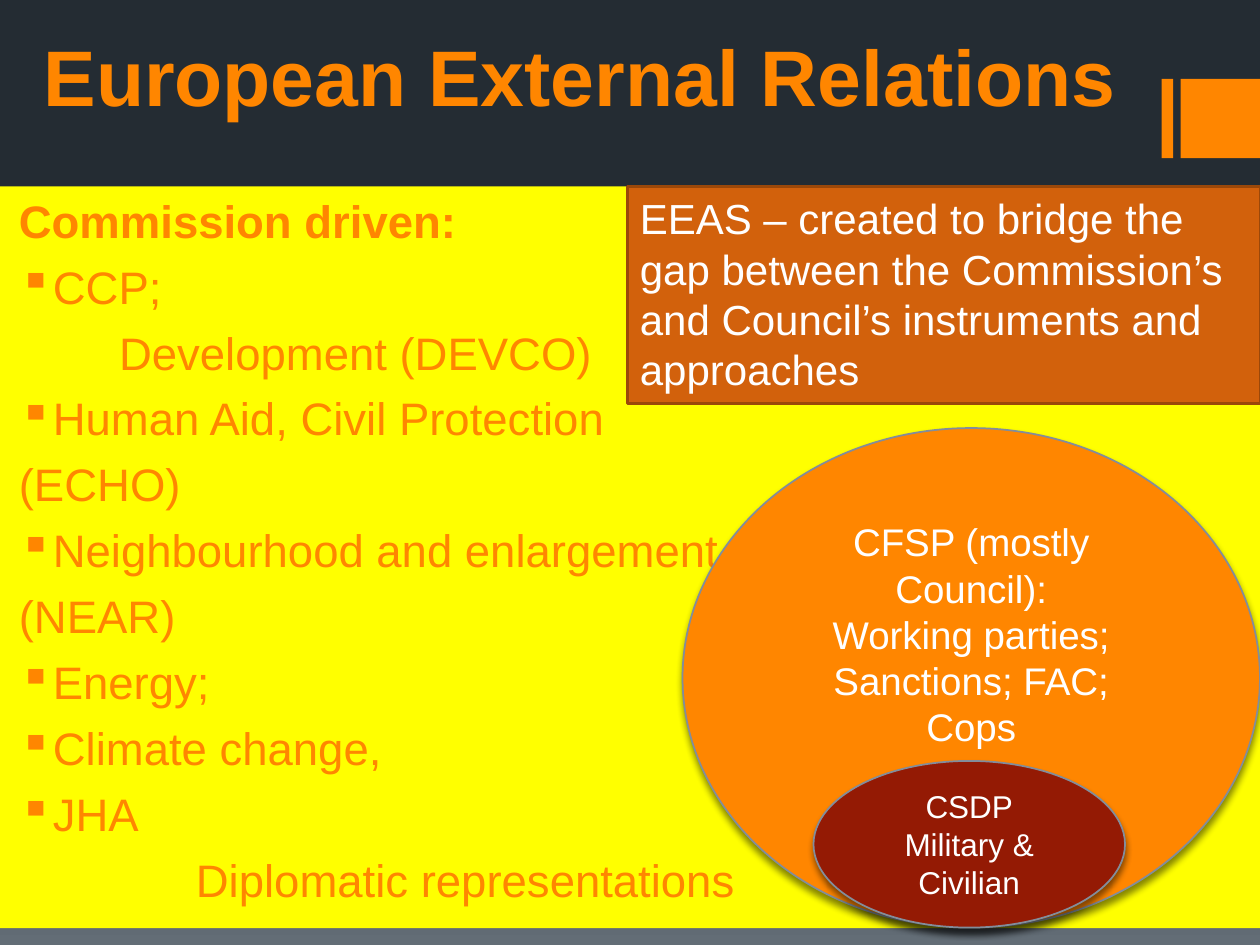
from lxml import etree
from pptx import Presentation
from pptx import util as u
from pptx.dml.color import RGBColor
from pptx.enum import shapes, text
from pptx.oxml import parse_xml
from pptx.oxml.ns import nsdecls, qn

# Content
ORANGE, WHITE = "FF8600", "FFFFFF"
TITLE = "European External Relations"
BACKGROUND_STOPS = [(0, "242C33"), (65, "273037"), (100, "636D76")]
ACCENT_BARS = [(23.42, 1.59, 0.23, 1.6), (23.8, 1.59, 1.6, 1.6)]
# Wording, left margin in cm, bulleted
COMMISSION = [
    ("Commission driven:", 0.13, False),
    ("CCP;", 0.63, True),
    ("Development (DEVCO)", 2.15, False),
    ("Human Aid, Civil Protection", 0.63, True),
    ("(ECHO)", 0.13, False),
    ("Neighbourhood and enlargement", 0.63, True),
    ("(NEAR)", 0.13, False),
    ("Energy;", 0.63, True),
    ("Climate change,", 0.63, True),
    ("JHA", 0.63, True),
    ("Diplomatic representations", 3.7, False),
]
EEAS = ["EEAS – created to bridge the gap between the Commission’s "
        "and Council’s instruments and approaches"]
# Place, fill, text size, bottom inset in cm, lines
ELLIPSES = [
    ((13.76, 8.63, 11.64, 10.07), ORANGE, 22, 1.9,
     ["CFSP (mostly Council):", "Working parties;", "Sanctions; FAC;", "Cops"]),
    ((16.4, 15.34, 6.28, 3.36), "941A04", 18, 0.13,
     ["CSDP", "Military & Civilian"]),
]


def colour(value):
    return RGBColor.from_string(value)


def add_shape(kind, place, fill, line=None, line_width=1):
    shape = slide.shapes.add_shape(kind, *map(u.Cm, place))
    shape.shadow.inherit = False
    shape.fill.solid()
    shape.fill.fore_color.rgb = colour(fill)
    if line:
        shape.line.color.rgb = colour(line)
        shape.line.width = u.Pt(line_width)
    else:
        shape.line.fill.background()
    return shape


def write(shape, lines, size, value, align, anchor, bold=False):
    frame = shape.text_frame
    frame.word_wrap = True
    frame.vertical_anchor = anchor
    frame.text = "\n".join(lines)
    for paragraph in frame.paragraphs:
        paragraph.alignment = align
        font = paragraph.font
        font.name, font.size, font.bold = "Arial", u.Pt(size), bold
        font.color.rgb = colour(value)
    return frame


def set_indent(paragraph, margin, bulleted):
    properties = paragraph._p.get_or_add_pPr()
    properties.set("marL", str(u.Cm(margin)))
    properties.set("indent", str(u.Cm(-0.5 if bulleted else 0)))
    if bulleted:
        bullet = etree.Element(qn("a:buChar"), char="▪")
        properties.find(qn("a:defRPr")).addprevious(bullet)


def add_drop_shadow(shape):
    effects = shape._element.spPr.find(qn("a:effectLst"))
    effects.append(parse_xml(
        f'<a:outerShdw {nsdecls("a")} blurRad="{u.Pt(3.8)}" dist="{u.Pt(3)}" '
        'dir="5400000" rotWithShape="0"><a:srgbClr val="000000">'
        '<a:alpha val="48000"/></a:srgbClr></a:outerShdw>'))


presentation = Presentation()
presentation.slide_width, presentation.slide_height = u.Cm(25.4), u.Cm(19.05)
slide = presentation.slides.add_slide(presentation.slide_layouts[6])
rectangle, ellipse = shapes.MSO_SHAPE.RECTANGLE, shapes.MSO_SHAPE.OVAL
left, center = text.PP_ALIGN.LEFT, text.PP_ALIGN.CENTER
top, middle, bottom = (text.MSO_ANCHOR.TOP, text.MSO_ANCHOR.MIDDLE,
                       text.MSO_ANCHOR.BOTTOM)

# Background gradient, dark at the top
background = slide.background.fill
background.gradient()
background.gradient_angle = 270
stops = slide._element.find(".//" + qn("a:gsLst"))
stops.clear()
for position, value in BACKGROUND_STOPS:
    stop = etree.SubElement(stops, qn("a:gs"), pos=str(position * 1000))
    etree.SubElement(stop, qn("a:srgbClr"), val=value)

# Accent bars and title
for place in ACCENT_BARS:
    add_shape(rectangle, place, ORANGE)
title = slide.shapes.add_textbox(*map(u.Cm, (0, 0, 23.37, 2.59)))
write(title, [TITLE], 45, ORANGE, center, bottom, bold=True)

# Commission list
panel = add_shape(rectangle, (0, 3.76, 25.4, 14.95), "FFFF00")
frame = write(panel, [item[0] for item in COMMISSION], 26, ORANGE, left, top)
for paragraph, (_, margin, bulleted) in zip(frame.paragraphs, COMMISSION):
    paragraph.space_before = u.Pt(6.5)
    set_indent(paragraph, margin, bulleted)
frame.paragraphs[0].space_before = u.Pt(0)
frame.paragraphs[0].font.bold = True

# EEAS box
box = add_shape(rectangle, (12.65, 3.76, 12.75, 4.37), "D2610C", "9B4809", 1.5)
write(box, EEAS, 24, WHITE, left, top)

# Council ellipses
for place, fill, size, inset, lines in ELLIPSES:
    shape = add_shape(ellipse, place, fill, "838D9B")
    add_drop_shadow(shape)
    write(shape, lines, size, WHITE, center, middle).margin_bottom = u.Cm(inset)

presentation.save("out.pptx")
